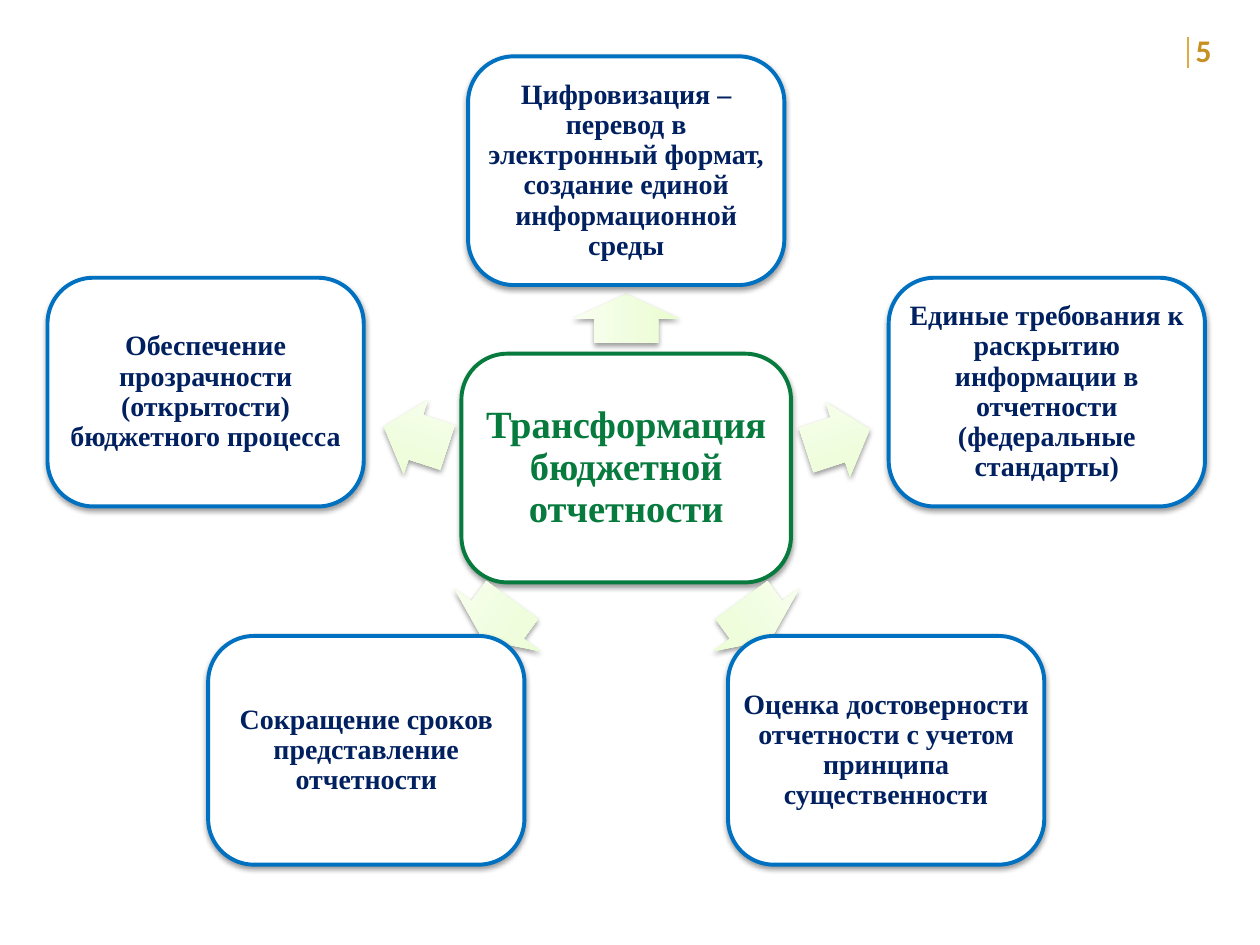
from math import cos, radians, sin

from lxml import etree
from pptx import Presentation
from pptx.dml.color import RGBColor
from pptx.enum.shapes import MSO_CONNECTOR, MSO_SHAPE
from pptx.enum.text import MSO_ANCHOR, PP_ALIGN
from pptx.oxml import parse_xml
from pptx.util import Inches, Pt

ROUND = MSO_SHAPE.ROUNDED_RECTANGLE
RIGHT, LEFT = MSO_SHAPE.RIGHT_ARROW, MSO_SHAPE.LEFT_ARROW
LINE = MSO_CONNECTOR.STRAIGHT
CENTER, MIDDLE = PP_ALIGN.CENTER, MSO_ANCHOR.MIDDLE
NS = "http://schemas.openxmlformats.org/drawingml/2006/main"

HEX = {"white": "FFFFFF", "green": "077A3E", "blue": "0070C0", "navy": "002060",
       "gold": "C79023", "rule": "DEAA46"}
RGB = {name: RGBColor.from_string(code) for name, code in HEX.items()}
STOPS = {0: "E9FDCF", 35: "EFFDDC", 100: "F9FFF1"}

COL = ROW = Inches(0.1)
MID_X, MID_Y = 49.7, 38.98
RAD_X, RAD_Y = 35.1, 25.43
BOX_W, BOX_H = 25.1, 18.15

SHADOW = (f'<a:effectLst xmlns:a="{NS}"><a:outerShdw blurRad="{Pt(3.1)}" '
          f'dist="{Pt(1.6)}" dir="5400000" rotWithShape="0"><a:srgbClr val="000000">'
          '<a:alpha val="38000"/></a:srgbClr></a:outerShdw></a:effectLst>')
GRAD = (f'<a:gradFill xmlns:a="{NS}" rotWithShape="1"><a:gsLst>'
        + "".join(f'<a:gs pos="{pos * 1000}"><a:srgbClr val="{code}"/></a:gs>'
                  for pos, code in STOPS.items())
        + '</a:gsLst><a:lin ang="16200000" scaled="0"/></a:gradFill>')

deck = Presentation()
deck.slide_width, deck.slide_height = 100 * COL, 75 * ROW
slide = deck.slides.add_slide(deck.slide_layouts[6])


def add(kind, x, y, w, h):
    return slide.shapes.add_shape(kind, round((x - w / 2) * COL), round((y - h / 2) * ROW),
                                  round(w * COL), round(h * ROW))


def write(shape, text, size, tint, face="Times New Roman"):
    para = shape.text_frame.paragraphs[0]
    run = para.add_run()
    run.text = text
    look = {"size": Pt(size), "bold": True, "name": face}
    for key, val in look.items():
        setattr(run.font, key, val)
    run.font.color.rgb = RGB[tint]
    return para


page = slide.shapes.add_textbox(round(93.9 * COL), 2 * ROW, round(6.1 * COL), 4 * ROW)
page.text_frame.word_wrap = True
write(page, "5", 18, "gold", "Calibri")

rule = slide.shapes.add_connector(LINE, round(94.3 * COL), round(2.9 * ROW),
                                  round(94.3 * COL), round(5.4 * ROW))
rule.line.color.rgb = RGB["rule"]
rule.line.width = Pt(1)
etree.SubElement(rule._element.spPr, f"{{{NS}}}effectLst")

boxes = [("Трансформация бюджетной отчетности", MID_X, 37.15, 26.15, "green", "green", 22)]
goals = [
    "Цифровизация – перевод в электронный формат, создание единой информационной среды",
    "Единые требования к раскрытию информации в отчетности (федеральные стандарты)",
    "Оценка достоверности отчетности с учетом принципа существенности",
    "Сокращение сроков представление отчетности",
    "Обеспечение прозрачности (открытости) бюджетного процесса",
]
for step, goal in enumerate(goals):
    turn = radians(72 * step - 90)
    boxes.append((goal, MID_X + RAD_X * cos(turn), MID_Y + RAD_Y * sin(turn),
                  BOX_W, "blue", "navy", 16))

arrows = [
    None,
    (RIGHT, 49.7, 25.3, 3.9, 8.5, 270),
    (RIGHT, 66.5, 34.9, 5.3, 6.2, 342),
    (RIGHT, 60, 49.2, 3.9, 8.5, 54),
    (LEFT, 39.5, 49.2, 3.9, 8.5, 306),
    (LEFT, 33, 34.7, 5.3, 6.2, 18),
]

for (text, x, y, wide, edge, ink, size), arrow in zip(boxes, arrows):
    if arrow:
        *spot, turn = arrow
        shape = add(*spot)
        shape.rotation = turn
        shape.adjustments[0], shape.adjustments[1] = 0.6, 0.5
        shape.line.fill.background()
        shape._element.spPr.insert(2, parse_xml(GRAD))
        shape._element.spPr.append(parse_xml(SHADOW))

    box = add(ROUND, x, y, wide, BOX_H)
    box.adjustments[0] = 0.2
    box.fill.solid()
    box.fill.fore_color.rgb = RGB["white"]
    box.line.color.rgb = RGB[edge]
    box.line.width = Pt(2.25)
    box._element.spPr.append(parse_xml(SHADOW))
    frame = box.text_frame
    pad = Inches(0.01)
    fit = {"word_wrap": True, "vertical_anchor": MIDDLE, "margin_left": pad,
           "margin_right": pad, "margin_top": pad, "margin_bottom": pad}
    for key, val in fit.items():
        setattr(frame, key, val)
    para = write(box, text, size, ink)
    para.alignment = CENTER
    para.line_spacing = 0.9

deck.save("out.pptx")
